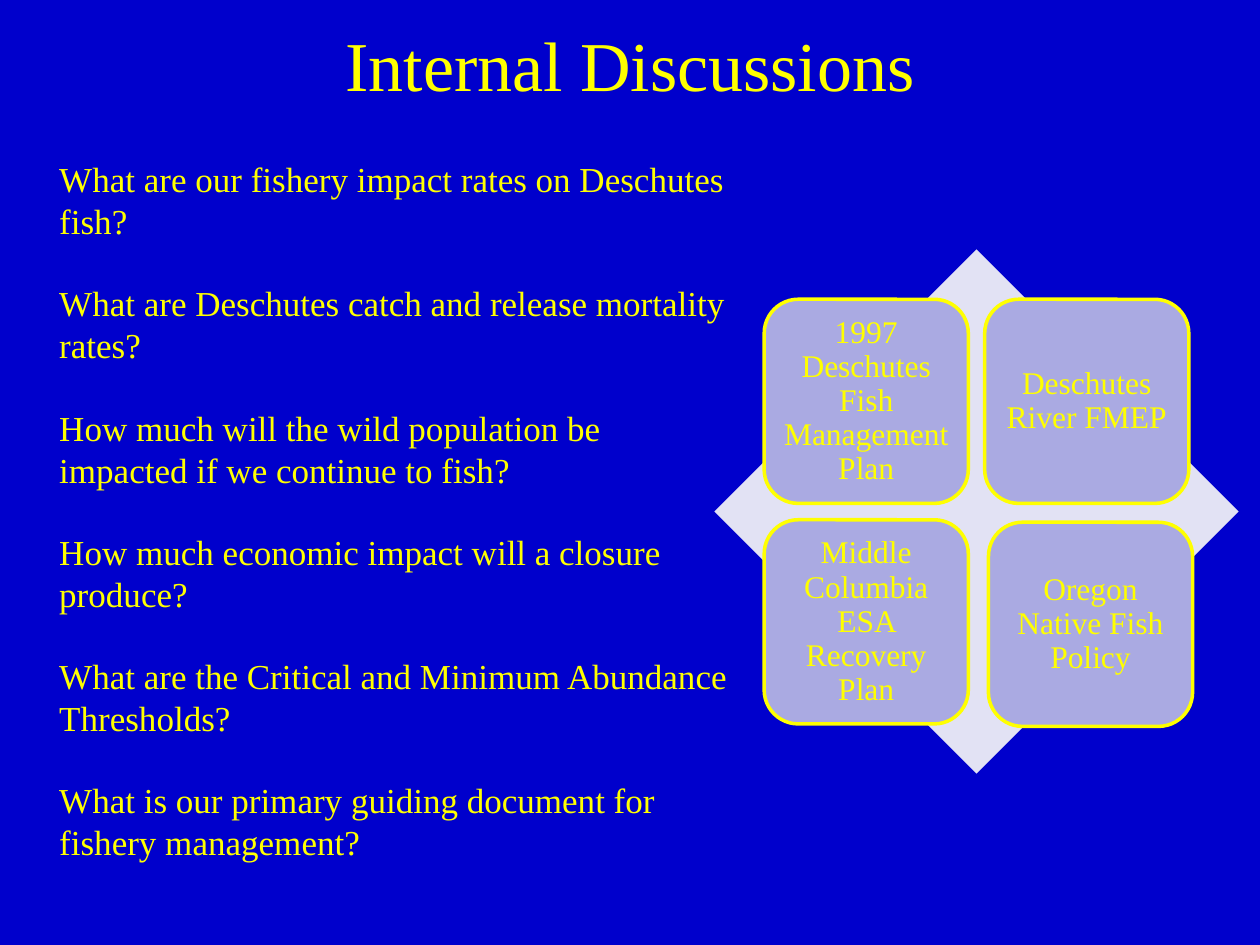
from dataclasses import dataclass

from lxml import etree
from pptx import Presentation
from pptx.dml.color import RGBColor
from pptx.enum.shapes import MSO_SHAPE
from pptx.enum.text import MSO_ANCHOR, MSO_AUTO_SIZE, PP_ALIGN
from pptx.oxml.ns import qn
from pptx.util import Inches, Pt

DIAMOND, ROUNDED = MSO_SHAPE.DIAMOND, MSO_SHAPE.ROUNDED_RECTANGLE
TOP, MIDDLE = MSO_ANCHOR.TOP, MSO_ANCHOR.MIDDLE
LEFT, CENTER = PP_ALIGN.LEFT, PP_ALIGN.CENTER
FIXED_SIZE = MSO_AUTO_SIZE.NONE

TITLE = "Internal Discussions"
QUESTIONS = [
    "What are our fishery impact rates on Deschutes fish?",
    "What are Deschutes catch and release mortality rates?",
    "How much will the wild population be impacted if we continue to fish?",
    "How much economic impact will a closure produce?",
    "What are the Critical and Minimum Abundance Thresholds?",
    "What is our primary guiding document for fishery management?",
]
# Text and the tile's small shift from its grid cell, in inches
DOCUMENTS = [
    [("1997 Deschutes Fish Management Plan", (0, 0)),
     ("Deschutes River FMEP", (0, 0))],
    [("Middle Columbia ESA Recovery Plan", (0, 0)),
     ("Oregon Native Fish Policy", (0.03, 0.02))],
]


@dataclass(frozen=True)
class Theme:
    font: str = "Times New Roman"
    background: RGBColor = RGBColor(0x00, 0x00, 0xCC)
    text: RGBColor = RGBColor(0xFF, 0xFF, 0x00)
    diamond: RGBColor = RGBColor(0xE2, 0xE2, 0xF4)
    tile: RGBColor = RGBColor(0xAA, 0xAA, 0xE2)
    title_size: int = 40
    body_size: int = 20
    tile_size: int = 18


THEME = Theme()
SLIDE_SIZE = (10, 7.5)
TITLE_BOX = (2.43, 0.06, 5.14, 0.92)
QUESTION_BOX = (0.37, 1.2, 5.53, 5.82)
DIAMOND_LEFT, DIAMOND_TOP, DIAMOND_SIDE = 5.67, 1.98, 4.16
TILE_SIDE, TILE_PITCH = 1.62, 1.75
TILE_MARGIN = (DIAMOND_SIDE - TILE_SIDE - TILE_PITCH) / 2


def place(shape, box):
    shape.left, shape.top, shape.width, shape.height = map(Inches, box)


def prepare_frame(shape, anchor, margins):
    """Margins run left, top, right, bottom, in inches."""
    frame = shape.text_frame
    frame.word_wrap = True
    frame.auto_size = FIXED_SIZE
    frame.vertical_anchor = anchor
    (frame.margin_left, frame.margin_top,
     frame.margin_right, frame.margin_bottom) = map(Inches, margins)
    return frame


def write(paragraph, text, size, alignment, line_spacing=1.0, space_before=0):
    paragraph.alignment = alignment
    paragraph.line_spacing = line_spacing
    paragraph.space_before = Pt(space_before)
    run = paragraph.add_run()
    run.text = text
    run.font.name = THEME.font
    run.font.size = Pt(size)
    run.font.color.rgb = THEME.text


def remove_bullet(paragraph):
    properties = paragraph._p.get_or_add_pPr()
    properties.set("marL", "0")
    properties.set("indent", "0")
    etree.SubElement(properties, qn("a:buNone"))


def add_panel(group, kind, left, top, side, color):
    panel = group.shapes.add_shape(kind, *map(Inches, (left, top, side, side)))
    panel.shadow.inherit = False
    panel.fill.solid()
    panel.fill.fore_color.rgb = color
    return panel


def add_title(slide):
    title = slide.shapes.title
    place(title, TITLE_BOX)
    frame = prepare_frame(title, TOP, (0.1, 0.11, 0.1, 0.05))
    write(frame.paragraphs[0], TITLE, THEME.title_size, CENTER)


def add_questions(slide):
    body = slide.placeholders[1]
    place(body, QUESTION_BOX)
    frame = prepare_frame(body, TOP, (0.1, 0.05, 0.1, 0.05))
    for index, question in enumerate(QUESTIONS):
        paragraph = frame.add_paragraph() if index else frame.paragraphs[0]
        remove_bullet(paragraph)
        write(paragraph, question, THEME.body_size, LEFT,
              space_before=23 if index else 0)


def add_document_matrix(slide):
    group = slide.shapes.add_group_shape()
    diamond = add_panel(group, DIAMOND, DIAMOND_LEFT, DIAMOND_TOP,
                        DIAMOND_SIDE, THEME.diamond)
    diamond.line.fill.background()
    for row, documents in enumerate(DOCUMENTS):
        for column, (name, (shift_x, shift_y)) in enumerate(documents):
            left = DIAMOND_LEFT + TILE_MARGIN + column * TILE_PITCH + shift_x
            top = DIAMOND_TOP + TILE_MARGIN + row * TILE_PITCH + shift_y
            tile = add_panel(group, ROUNDED, left, top, TILE_SIDE, THEME.tile)
            tile.line.color.rgb = THEME.text
            tile.line.width = Pt(2)
            frame = prepare_frame(tile, MIDDLE, (0.07,) * 4)
            write(frame.paragraphs[0], name, THEME.tile_size, CENTER, 0.9)


def main():
    presentation = Presentation()
    presentation.slide_width, presentation.slide_height = map(Inches, SLIDE_SIZE)
    slide = presentation.slides.add_slide(presentation.slide_layouts[1])
    slide.background.fill.solid()
    slide.background.fill.fore_color.rgb = THEME.background
    add_title(slide)
    add_document_matrix(slide)
    add_questions(slide)
    presentation.save("out.pptx")


if __name__ == "__main__":
    main()
